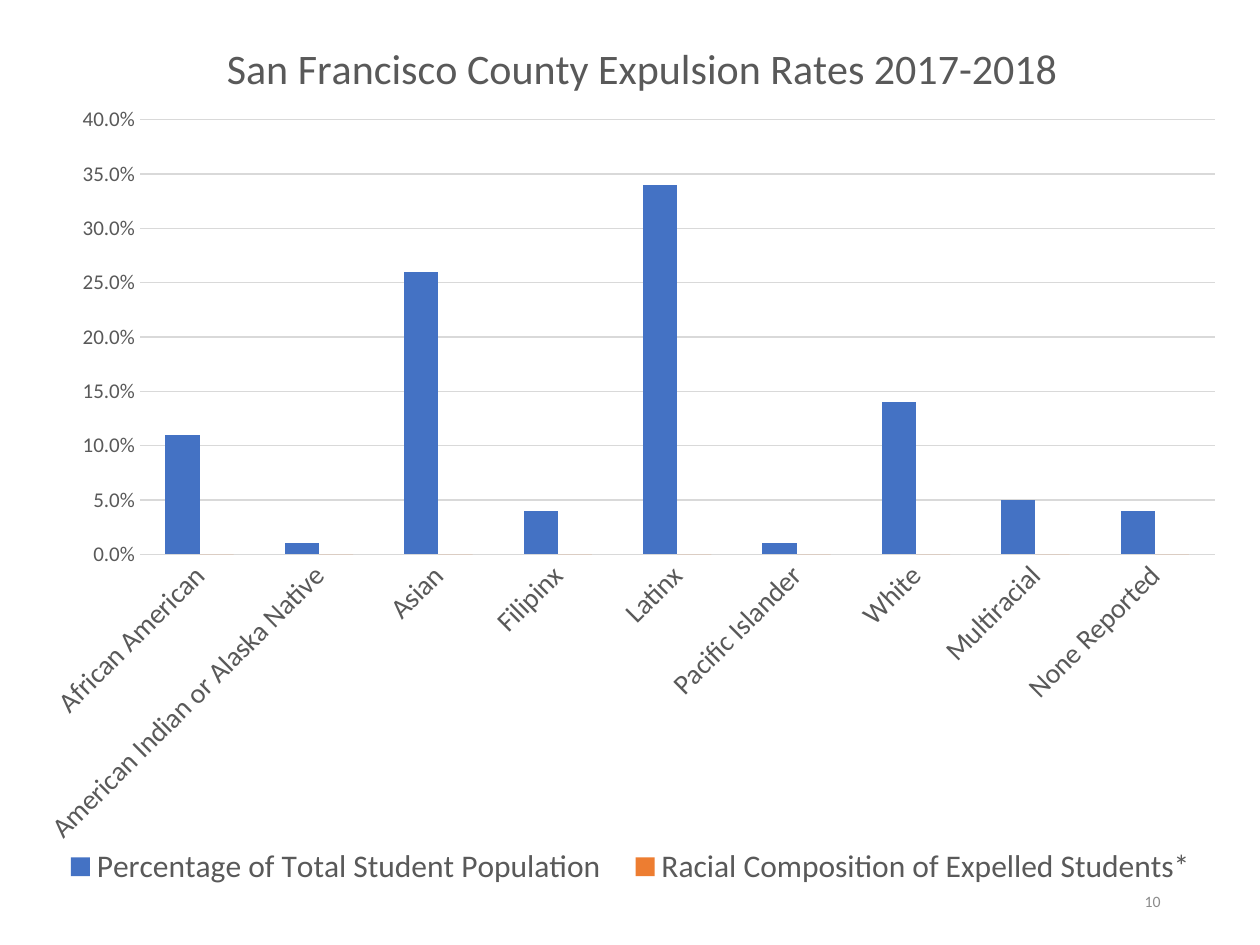
from lxml import etree
from pptx import Presentation
from pptx.chart.data import CategoryChartData
from pptx.dml.color import RGBColor
from pptx.enum.chart import XL_CHART_TYPE, XL_LEGEND_POSITION, XL_TICK_MARK
from pptx.enum.text import MSO_ANCHOR, PP_ALIGN
from pptx.oxml.ns import qn
from pptx.util import Inches, Pt

COLUMNS = XL_CHART_TYPE.COLUMN_CLUSTERED
BOTTOM = XL_LEGEND_POSITION.BOTTOM
NO_TICK = XL_TICK_MARK.NONE
MIDDLE = MSO_ANCHOR.MIDDLE
RIGHT = PP_ALIGN.RIGHT

FONT = "Calibri"
TEXT = RGBColor(0x59, 0x59, 0x59)
MUTED = RGBColor(0x8C, 0x8C, 0x8C)
GRID = RGBColor(0xD9, 0xD9, 0xD9)
BLUE = RGBColor(0x44, 0x72, 0xC4)
ORANGE = RGBColor(0xED, 0x7D, 0x31)

POPULATION = {
    "African American": 0.11,
    "American Indian or Alaska Native": 0.01,
    "Asian": 0.26,
    "Filipinx": 0.04,
    "Latinx": 0.34,
    "Pacific Islander": 0.01,
    "White": 0.14,
    "Multiracial": 0.05,
    "None Reported": 0.04,
}


def style_font(font, size, color=TEXT):
    font.name = FONT
    font.size = Pt(size)
    font.bold = False
    font.color.rgb = color


def style_line(line):
    line.color.rgb = GRID
    line.width = Pt(0.75)


def set_layout(part, after, frame, left, top, width=None, height=None, inner=False):
    """Place a chart part by lengths measured inside the chart frame."""
    for old in part.findall(qn("c:layout")):
        part.remove(old)
    layout = etree.Element(qn("c:layout"))
    manual = etree.SubElement(layout, qn("c:manualLayout"))
    settings = {"layoutTarget": "inner"} if inner else {}
    settings.update(xMode="edge", yMode="edge", x=left / frame[0], y=top / frame[1])
    if width is not None:
        settings.update(w=width / frame[0], h=height / frame[1])
    for tag, value in settings.items():
        etree.SubElement(manual, qn("c:" + tag)).set("val", str(value))
    if after:
        part.find(qn(after)).addnext(layout)
    else:
        part.insert(0, layout)


def add_expulsion_chart(s, left, top, width, height):
    frame = (width, height)
    data = CategoryChartData(number_format="0.0%")
    data.categories = list(POPULATION)
    data.add_series("Percentage of Total Student Population", POPULATION.values())
    data.add_series("Racial Composition of Expelled Students*", [0] * len(POPULATION))
    chart = s.shapes.add_chart(COLUMNS, left, top, width, height, data).chart
    style_font(chart.font, 10)

    # Title
    chart.has_title = True
    title = chart.chart_title
    r = title.text_frame.paragraphs[0].add_run()
    r.text = "San Francisco County Expulsion Rates 2017-2018"
    style_font(r.font, 24)
    title.include_in_layout = False
    set_layout(title._element, "c:tx", frame, Inches(1.57), Inches(0.26))

    # Columns
    plot = chart.plots[0]
    plot.gap_width = 150
    plot.overlap = 0
    plot.vary_by_categories = False
    for series, color in zip(plot.series, (BLUE, ORANGE)):
        series.format.fill.solid()
        series.format.fill.fore_color.rgb = color
        series.invert_if_negative = False
    set_layout(chart._chartSpace.chart.plotArea, None, frame, Inches(0.94),
               Inches(0.95), Inches(8.53), Inches(3.45), inner=True)

    # Axes
    for axis, size in ((chart.category_axis, 16), (chart.value_axis, 12)):
        axis.major_tick_mark = axis.minor_tick_mark = NO_TICK
        style_font(axis.tick_labels.font, size)
    style_line(chart.category_axis.format.line)
    body = chart.category_axis._element.find(qn("c:txPr")).find(qn("a:bodyPr"))
    body.set("rot", "-2700000")  # 45 degrees upwards
    body.set("vert", "horz")
    value_axis = chart.value_axis
    value_axis.minimum_scale, value_axis.maximum_scale = 0, 0.4
    value_axis.major_unit = 0.05
    value_axis.tick_labels.number_format = "0.0%"
    value_axis.tick_labels.number_format_is_linked = False
    value_axis.format.line.fill.background()
    style_line(value_axis.major_gridlines.format.line)

    # Legend
    chart.has_legend = True
    legend = chart.legend
    legend.position = BOTTOM
    legend.include_in_layout = False
    style_font(legend.font, 18)
    set_layout(legend._element, "c:legendPos", frame, Inches(0.2), Inches(6.68),
               Inches(9.27), Inches(0.4))


def add_page_number(s, left, top, width, height):
    tf = s.shapes.add_textbox(left, top, width, height).text_frame
    tf.word_wrap = True
    tf.vertical_anchor = MIDDLE
    p = tf.paragraphs[0]
    p.alignment = RIGHT
    r = p.add_run()
    r.text = "10"
    style_font(r.font, 9, MUTED)


def main():
    prs = Presentation()
    prs.slide_width, prs.slide_height = Inches(10), Inches(7.5)
    s = prs.slides.add_slide(prs.slide_layouts[6])
    add_expulsion_chart(s, Inches(0.17), Inches(0), Inches(9.67), Inches(7.33))
    add_page_number(s, Inches(7.06), Inches(6.95), Inches(2.25), Inches(0.4))
    prs.save("out.pptx")


if __name__ == "__main__":
    main()
